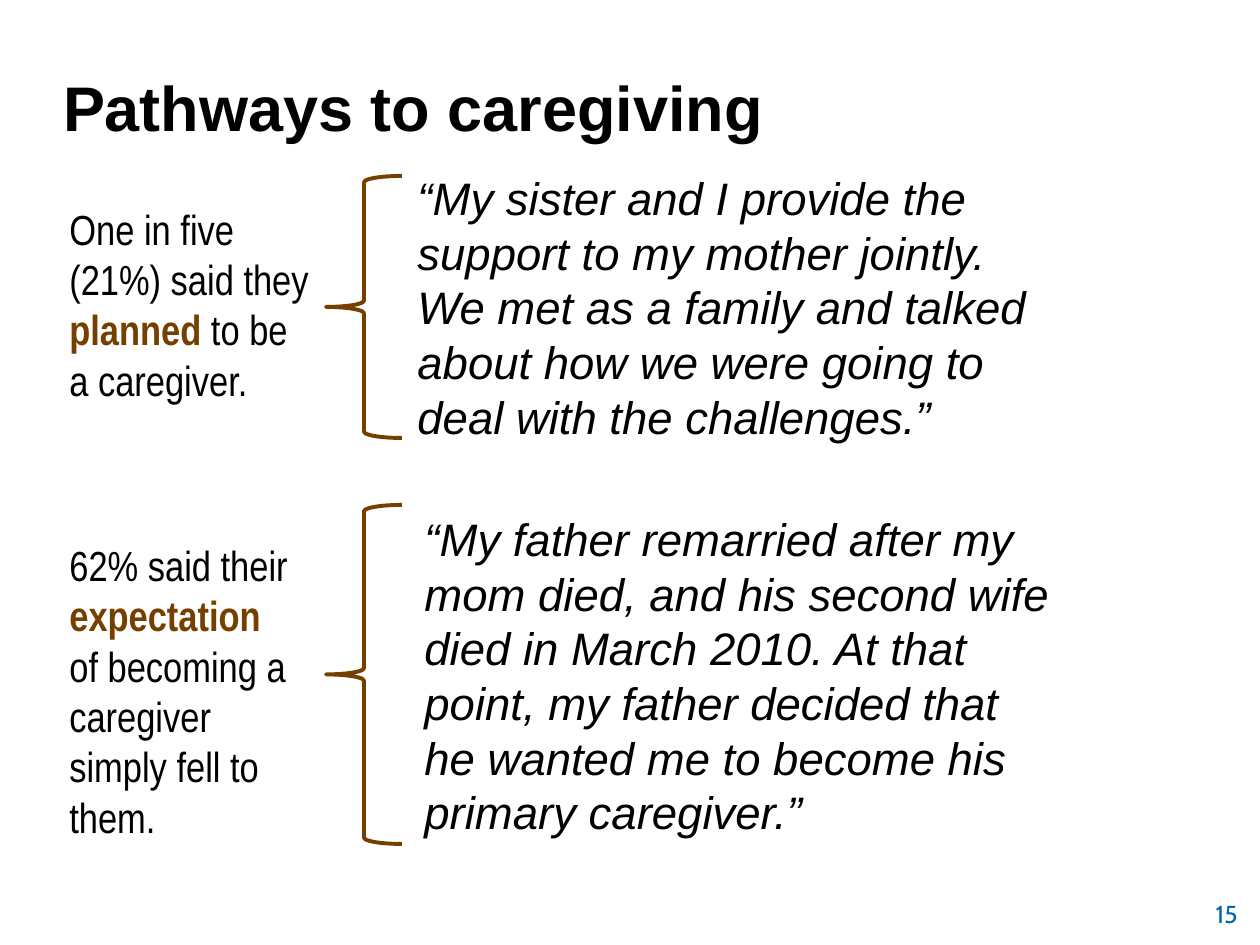
import pptx
import pptx.util
import pptx.dml.color
import pptx.enum.shapes
import pptx.enum.text

UNIT = 914400 / 126
ALIGN = pptx.enum.text.PP_ALIGN
ANCHOR = pptx.enum.text.MSO_ANCHOR
THEME = {
    "ink": "000000", "brown": "753F00", "blue": "0067AC",
    "title": 36, "quote": 26, "claim": 24, "page": 14, "line": 2.25,
    "sans": "Arial", "narrow": "Arial Narrow", "foot": "Cabin",
}

TITLE = ("Pathways to caregiving", (63, 24, 977, 120))
PAGE = ("15", (988, 872, 262, 63))
PATHS = [
    {
        "claim": ["One in five (21%) said they ", "*planned ", "to be \na caregiver."],
        "quote": "“My sister and I provide the support to my mother jointly. \n"
                 "We met as a family and talked about how we were going to "
                 "deal with the challenges.”",
        "claim at": (57, 197, 289, 217),
        "brace at": (326, 176, 76, 262),
        "quote at": (357, 164, 725, 296),
    },
    {
        "claim": ["62% said their ", "*expectation \n",
                  "of becoming a caregiver simply fell to them."],
        "quote": "“My father remarried after my mom died, and his second wife "
                 "died in March 2010. At that point, my father decided that \n"
                 "he wanted me to become his primary caregiver.”",
        "claim at": (57, 533, 262, 357),
        "brace at": (326, 505, 76, 339),
        "quote at": (364, 505, 713, 382),
    },
]


def emu(px):
    return pptx.util.Emu(round(px * UNIT))


def place(box):
    return [emu(px) for px in box]


def rgb(name):
    return pptx.dml.color.RGBColor.from_string(THEME[name])


def write(slide, runs, box, size, face, color="ink", bold=False, italic=False,
          align=ALIGN.LEFT, anchor=ANCHOR.TOP, inset=None, indent=0, lead=None):
    frame = slide.shapes.add_textbox(*place(box)).text_frame
    frame.word_wrap = True
    frame.vertical_anchor = anchor
    if inset is not None:
        frame.margin_left = frame.margin_right = emu(inset)
        frame.margin_top = frame.margin_bottom = emu(inset)
    para = frame.paragraphs[0]
    para.alignment = align
    if lead:
        para.line_spacing = pptx.util.Pt(THEME[size] * lead)
    if indent:
        para._p.get_or_add_pPr().set("marL", str(emu(indent)))
    for text in runs:
        strong = text.startswith("*")
        for row, part in enumerate(text.lstrip("*").split("\n")):
            if row:
                para.add_line_break()
            if not part:
                continue
            run = para.add_run()
            run.text = part
            font = run.font
            font.name = THEME[face]
            font.size = pptx.util.Pt(THEME[size])
            font.bold = bold or strong
            font.italic = italic
            font.color.rgb = rgb("brown" if strong else color)


def brace(slide, box):
    kind = pptx.enum.shapes.MSO_SHAPE.LEFT_BRACE
    shape = slide.shapes.add_shape(kind, *place(box))
    shape.shadow.inherit = False
    shape.fill.background()
    shape.line.color.rgb = rgb("brown")
    shape.line.width = pptx.util.Pt(THEME["line"])


def main():
    deck = pptx.Presentation()
    deck.slide_width, deck.slide_height = emu(1260), emu(945)
    slide = deck.slides.add_slide(deck.slide_layouts[6])
    text, box = TITLE
    write(slide, [text], box, "title", "sans", bold=True,
          anchor=ANCHOR.BOTTOM, inset=0)
    for item in PATHS:
        write(slide, item["claim"], item["claim at"], "claim", "narrow", lead=1.2)
        brace(slide, item["brace at"])
        write(slide, [item["quote"]], item["quote at"], "quote", "sans",
              italic=True, indent=48, lead=1.2)
    text, box = PAGE
    write(slide, [text], box, "page", "foot", color="blue",
          align=ALIGN.RIGHT, anchor=ANCHOR.BOTTOM)
    deck.save("out.pptx")


if __name__ == "__main__":
    main()
